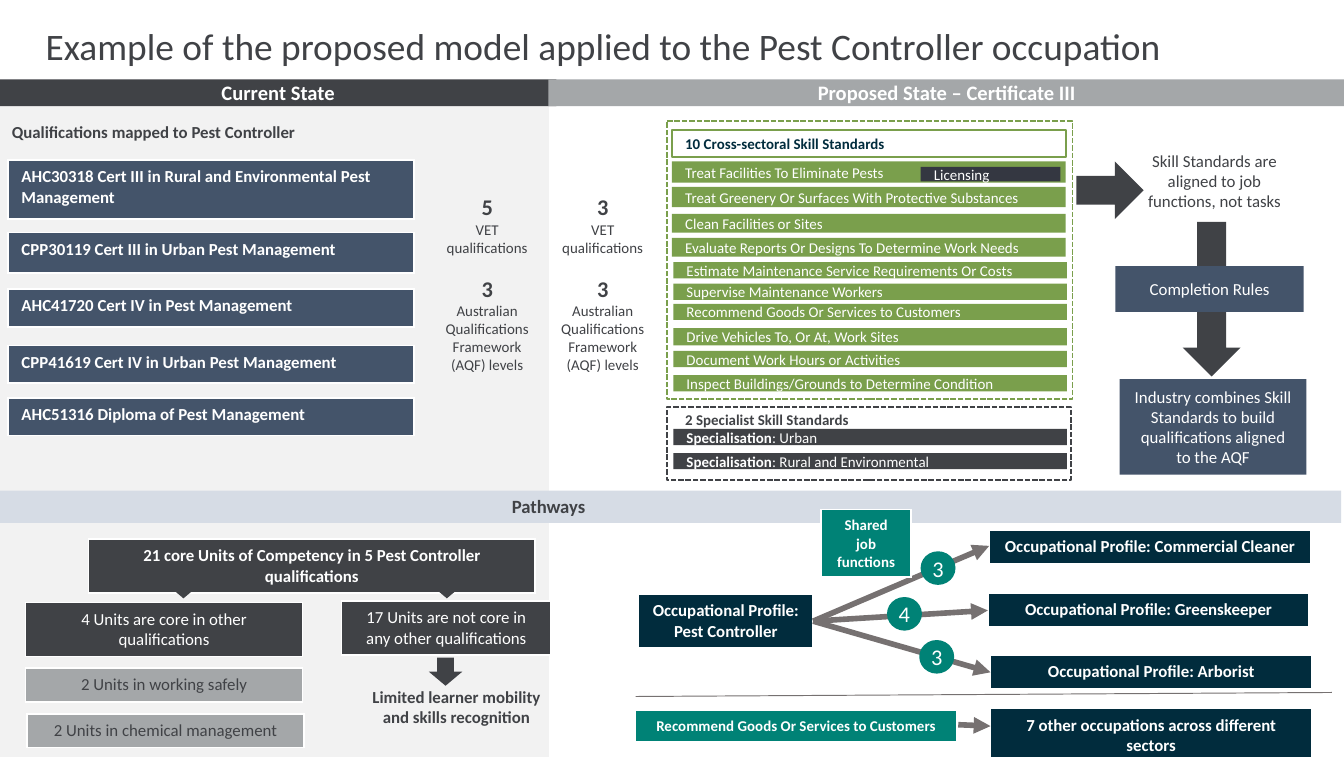
from lxml import etree
from pptx import Presentation
from pptx.dml.color import RGBColor
from pptx.enum.dml import MSO_LINE
from pptx.enum.shapes import MSO_CONNECTOR, MSO_SHAPE
from pptx.enum.text import MSO_ANCHOR, MSO_AUTO_SIZE, PP_ALIGN
from pptx.oxml.ns import qn
from pptx.util import Inches, Pt

RECT, OVAL = MSO_SHAPE.RECTANGLE, MSO_SHAPE.OVAL
RIGHT_ARROW, DOWN_ARROW = MSO_SHAPE.RIGHT_ARROW, MSO_SHAPE.DOWN_ARROW
LEFT, CENTER = PP_ALIGN.LEFT, PP_ALIGN.CENTER
TOP, MIDDLE = MSO_ANCHOR.TOP, MSO_ANCHOR.MIDDLE
FONT = "Calibri"
COLORS = {
    "white": "FFFFFF", "pale": "F2F2F2", "dark": "404246", "grey": "A4A7A9",
    "slate": "44546A", "green": "7A9F4C", "navy": "012C3D", "teal": "008276",
    "ink": "343741", "band": "D6DCE5", "line": "767171",
}


def rgb(name):
    return RGBColor.from_string(COLORS[name])


def style(p, size, color, bold=None, align=LEFT):
    p.alignment = align
    p.font.name, p.font.size, p.font.bold = FONT, Pt(size), bold
    p.font.color.rgb = rgb(color)


def write(tf, lines, size, color, bold=False, align=CENTER):
    for i, line in enumerate(lines):
        p = tf.add_paragraph() if i else tf.paragraphs[0]
        p.add_run().text = line
        style(p, size, color, bold, align)


def add_shape(shapes, kind, x, y, w, h, fill=None, line=None, width=1, dash=None):
    sp = shapes.add_shape(kind, Inches(x), Inches(y), Inches(w), Inches(h))
    sp.shadow.inherit = False
    if fill:
        sp.fill.solid()
        sp.fill.fore_color.rgb = rgb(fill)
    else:
        sp.fill.background()
    if line:
        sp.line.color.rgb = rgb(line)
        sp.line.width = Pt(width)
        if dash:
            sp.line.dash_style = dash
    else:
        sp.line.fill.background()
    tf = sp.text_frame
    tf.word_wrap, tf.vertical_anchor = True, MIDDLE
    tf.margin_top = tf.margin_bottom = 0
    return sp


def add_label(shapes, x, y, w, h, anchor=TOP, grow=True):
    tf = shapes.add_textbox(Inches(x), Inches(y), Inches(w), Inches(h)).text_frame
    tf.word_wrap, tf.vertical_anchor = True, anchor
    if grow:
        tf.auto_size = MSO_AUTO_SIZE.SHAPE_TO_FIT_TEXT
    return tf


def add_card(s, x, y, w, h, lines, fill, color="white", size=9, bold=True, align=CENTER):
    frame = s.shapes.add_table(1, 1, Inches(x), Inches(y), Inches(w), Inches(h))
    table = frame.table
    table.first_row = table.horz_banding = False
    cell = table.cell(0, 0)
    cell.fill.solid()
    cell.fill.fore_color.rgb = rgb(fill)
    write(cell.text_frame, lines, size, color, bold, align)


def add_line(s, x1, y1, x2, y2, width, arrow=True):
    c = s.shapes.add_connector(MSO_CONNECTOR.STRAIGHT, Inches(x1), Inches(y1), Inches(x2), Inches(y2))
    c.line.color.rgb = rgb("line")
    c.line.width = Pt(width)
    if arrow:
        etree.SubElement(c.line._get_or_add_ln(), qn("a:tailEnd"), type="triangle")
    etree.SubElement(c._element.spPr, qn("a:effectLst"))


def add_header(s, x, y, w, h, text, fill):
    sp = add_shape(s.shapes, RECT, x, y, w, h, fill)
    write(sp.text_frame, [text], 11, "white", True)


def add_counts(s, x, y, w, h, vet_count):
    tf = add_label(s.shapes, x, y, w, h)
    rows = [(vet_count, 12, True, 0), ("VET qualifications", 8, False, 0),
            ("3", 12, True, 10),
            ("Australian Qualifications Framework (AQF) levels", 8, False, 0)]
    for i, (text, size, bold, gap) in enumerate(rows):
        p = tf.add_paragraph() if i else tf.paragraphs[0]
        p.add_run().text = text
        style(p, size, "dark", bold, CENTER)
        if gap:
            p.space_before = Pt(gap)


def add_qualifications(s, x, y, w):
    tf = add_label(s.shapes, x - 0.07, y, 4.76, 0.24, MIDDLE, False)
    write(tf, ["Qualifications mapped to Pest Controller"], 9, "dark", True, LEFT)
    for dy, h, text in [
        (0.33, 0.44, "AHC30318 Cert III in Rural and Environmental Pest Management"),
        (0.87, 0.3, "CPP30119 Cert III in Urban Pest Management"),
        (1.29, 0.28, "AHC41720 Cert IV in Pest Management"),
        (1.71, 0.28, "CPP41619 Cert IV in Urban Pest Management"),
        (2.1, 0.28, "AHC51316 Diploma of Pest Management"),
    ]:
        add_card(s, x, y + dy, w, h, [text], "slate", align=LEFT)


def add_cross_sectoral(s, x, y, w, h):
    shapes = s.shapes.add_group_shape().shapes
    bar_w = w - 0.09
    for dx, dy, bar_h, text in [
        (0.04, 0.3, 0.16, "Treat Facilities To Eliminate Pests"),
        (0.04, 0.49, 0.15, "Treat Greenery Or Surfaces With Protective Substances"),
        (0.04, 0.69, 0.14, "Clean Facilities or Sites"),
        (0.04, 0.87, 0.14, "Evaluate Reports Or Designs To Determine Work Needs"),
        (0.05, 1.05, 0.12, "Estimate Maintenance Service Requirements Or Costs"),
        (0.05, 1.21, 0.12, "Supervise Maintenance Workers"),
        (0.05, 1.36, 0.12, "Recommend Goods Or Services to Customers"),
        (0.05, 1.54, 0.13, "Drive Vehicles To, Or At, Work Sites"),
        (0.05, 1.71, 0.12, "Document Work Hours or Activities"),
        (0.05, 1.89, 0.12, "Inspect Buildings/Grounds to Determine Condition"),
    ]:
        sp = add_shape(shapes, RECT, x + dx, y + dy, bar_w, bar_h, "green")
        write(sp.text_frame, [text], 8, "white", align=LEFT)
    sp = add_shape(shapes, RECT, x + 0.04, y + 0.07, bar_w, 0.2, line="green")
    write(sp.text_frame, ["10 Cross-sectoral Skill Standards"], 8, "navy", True, LEFT)
    add_shape(shapes, RECT, x, y, w, h, line="green", dash=MSO_LINE.SQUARE_DOT)
    sp = add_shape(shapes, RECT, x + 1.89, y + 0.34, 1.04, 0.11, "ink")
    write(sp.text_frame, ["Licensing"], 8, "white", align=LEFT)


def add_specialist(s, x, y, w, h):
    shapes = s.shapes.add_group_shape().shapes
    for dy, text in [(0.16, ": Urban"), (0.34, ": Rural and Environmental")]:
        sp = add_shape(shapes, RECT, x + 0.05, y + dy, w - 0.08, 0.12, "dark")
        p = sp.text_frame.paragraphs[0]
        r = p.add_run()
        r.text, r.font.bold = "Specialisation", True
        p.add_run().text = text
        style(p, 8, "white")
    tf = add_label(shapes, x + 0.04, y + 0.03, w - 0.08, 0.12, MIDDLE, False)
    tf.margin_top = tf.margin_bottom = 0
    write(tf, ["2 Specialist Skill Standards"], 8, "dark", True, LEFT)
    add_shape(shapes, RECT, x, y, w, h, line="dark", dash=MSO_LINE.SQUARE_DOT)


def add_rules(s, x, y):
    add_shape(s.shapes, RIGHT_ARROW, x + 0.43, y + 0.94, 1.15, 0.43, "dark").rotation = 90
    add_shape(s.shapes, RIGHT_ARROW, x, y + 0.13, 0.5, 0.43, "dark")
    tf = add_label(s.shapes, x + 0.33, y, 1.39, 0.56)
    write(tf, ["Skill Standards are", "aligned to job functions, not tasks"], 9, "dark")
    for dx, dy, w, h, text in [
        (0.29, 0.91, 1.4, 0.34, "Completion Rules"),
        (0.32, 1.75, 1.39, 0.71,
         "Industry combines Skill Standards to build qualifications aligned to the AQF"),
    ]:
        sp = add_shape(s.shapes, RECT, x + dx, y + dy, w, h, "slate")
        write(sp.text_frame, [text], 9, "white")


def add_units(s, x, y):
    for dx, dy, w, h, text, fill, color, bold in [
        (0.47, 0, 3.32, 0.4, "21 core Units of Competency in 5 Pest Controller qualifications",
         "dark", "white", True),
        (0, 0.47, 2.06, 0.4, "4 Units are core in other qualifications", "dark", "white", False),
        (2.35, 0.46, 1.56, 0.4, "17 Units are not core in any other qualifications",
         "dark", "white", False),
        (0, 0.96, 2.06, 0.25, "2 Units in working safely", "grey", "dark", False),
        (0.01, 1.3, 2.06, 0.25, "2 Units in chemical management", "grey", "dark", False),
    ]:
        add_card(s, x + dx, y + dy, w, h, [text], fill, color, bold=bold)
    for dx, dy in [(1.05, 0.23), (3.01, 0.23), (3, 0.88)]:
        add_shape(s.shapes, DOWN_ARROW, x + dx, y + dy, 0.25, 0.21, "dark")
    tf = add_label(s.shapes, x + 2.45, y + 1.05, 1.51, 0.4)
    write(tf, ["Limited learner mobility and skills recognition"], 9, "dark", True)


def add_profiles(s, x, y):
    add_card(s, x + 0.02, y + 0.63, 1.3, 0.4, ["Occupational Profile:", "Pest Controller"], "navy")
    for dx, dy, text, end_y, ball_x, ball_y, count in [
        (2.63, 0.15, "Occupational Profile: Commercial Cleaner", 0.27, 2.12, 0.31, "3"),
        (2.62, 0.62, "Occupational Profile: Greenskeeper", 0.75, 1.87, 0.65, "4"),
        (2.64, 1.08, "Occupational Profile: Arborist", 1.21, 2.11, 0.97, "3"),
    ]:
        add_card(s, x + dx, y + dy, 2.39, 0.25, [text], "navy")
        add_line(s, x + 1.32, y + 0.83, x + dx, y + end_y, 3)
        sp = add_shape(s.shapes, OVAL, x + ball_x, y + ball_y, 0.26, 0.25, "teal")
        sp.text_frame.margin_left = sp.text_frame.margin_right = 0
        write(sp.text_frame, [count], 12, "white")
    add_line(s, x, y + 1.39, x + 5.18, y + 1.36, 0.5, False)
    add_card(s, x, y + 1.49, 2.39, 0.23, ["Recommend Goods Or Services to Customers"], "teal", size=8)
    add_card(s, x + 2.64, y + 1.48, 2.39, 0.25, ["7 other occupations across different sectors"], "navy")
    add_line(s, x + 2.4, y + 1.6, x + 2.64, y + 1.61, 3)
    add_card(s, x + 1.38, y, 0.67, 0.49, ["Shared job functions"], "teal", size=8)


def add_title(s, x, y, w, h):
    title = s.shapes.title
    title.left, title.top, title.width, title.height = map(Inches, (x, y, w, h))
    tf = title.text_frame
    tf.word_wrap, tf.vertical_anchor = True, TOP
    write(tf, ["Example of the proposed model applied to the Pest Controller occupation"],
          20, "dark", align=LEFT)
    tf.paragraphs[0].line_spacing = 0.9


def main():
    prs = Presentation()
    prs.slide_width, prs.slide_height = Inches(10), Inches(5.63)
    s = prs.slides.add_slide(prs.slide_layouts[5])
    add_title(s, 0.24, 0.16, 9.7, 0.79)
    add_shape(s.shapes, RECT, -0.02, 0.6, 4.1, 5.05, "pale", "pale")
    add_header(s, 0, 0.59, 4.14, 0.2, "Current State", "dark")
    add_header(s, 4.08, 0.59, 5.93, 0.2, "Proposed State – Certificate III", "grey")
    add_qualifications(s, 0.06, 0.86, 3.02)
    add_counts(s, 3.15, 1.39, 0.95, 1.72, "5")
    add_counts(s, 4.01, 1.39, 0.95, 1.72, "3")
    add_cross_sectoral(s, 4.96, 0.9, 3.02, 2.07)
    add_specialist(s, 4.96, 3.03, 3.01, 0.54)
    add_rules(s, 8.01, 1.07)
    add_shape(s.shapes, RECT, -0.04, 3.65, 10.02, 0.24, "band")
    write(add_label(s.shapes, 3.71, 3.63, 0.77, 0.27), ["Pathways"], 10, "dark", True, LEFT)
    add_units(s, 0.19, 4.01)
    add_profiles(s, 4.73, 3.79)
    prs.save("out.pptx")


if __name__ == "__main__":
    main()
